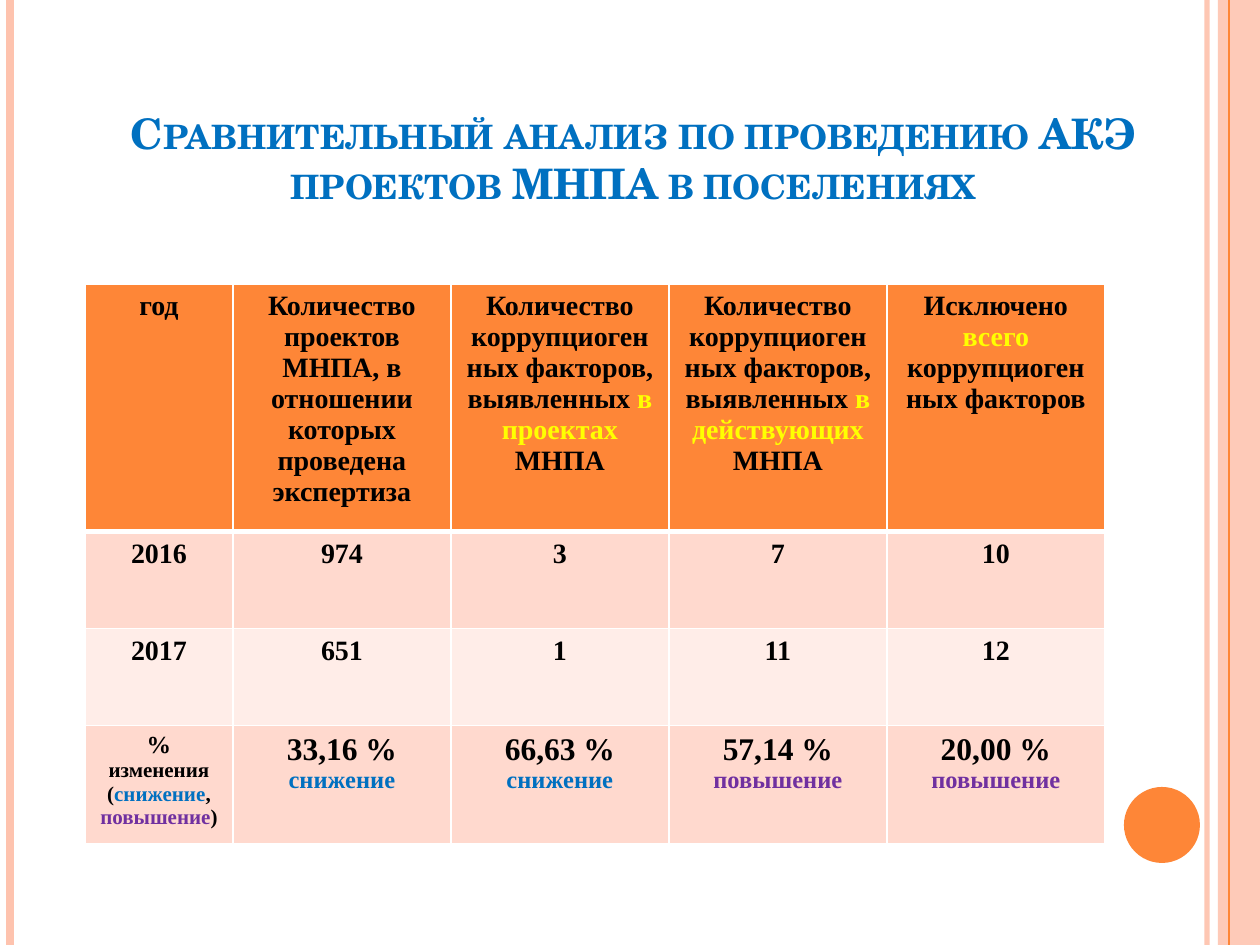
from lxml import etree
from pptx import Presentation, util as u
from pptx.dml.color import RGBColor
from pptx.enum import shapes, text
from pptx.oxml.ns import qn

ORANGE, PEACH, WHITE, BLACK = "FE8637", "FEC3AE", "FFFFFF", "000000"
YELLOW, BLUE, PURPLE = "FFFF00", "0070C0", "7030A0"
LIGHT, PALE = "FFD9CE", "FFEDE8"
WIDE, HIGH = 1260, 945


def px(n):
    return u.Inches(n / 126)


def rgb(code):
    return RGBColor.from_string(code)


def fade(fill, share):
    """Make a solid fill partly clear; share is the opacity in percent."""
    tint = fill.find(".//" + qn("a:srgbClr"))
    etree.SubElement(tint, qn("a:alpha")).set("val", str(share * 1000))


def stripe(slide, x, color, width, share=100):
    line = slide.shapes.add_connector(
        shapes.MSO_CONNECTOR.STRAIGHT, px(x), 0, px(x), px(HIGH))
    line.line.color.rgb = rgb(color)
    line.line.width = u.Pt(width)
    props = line._element.spPr
    if share < 100:
        fade(props.find(qn("a:ln")), share)
    etree.SubElement(props, qn("a:effectLst"))


def block(slide, kind, box, color, share=100):
    shape = slide.shapes.add_shape(kind, *map(px, box))
    shape.shadow.inherit = False
    shape.fill.solid()
    shape.fill.fore_color.rgb = rgb(color)
    shape.line.fill.background()
    if share < 100:
        fade(shape._element.spPr.find(qn("a:solidFill")), share)


def title(slide, words, box):
    frame = slide.shapes.add_textbox(*map(px, box)).text_frame
    frame.word_wrap = True
    frame.vertical_anchor = text.MSO_ANCHOR.BOTTOM
    para = frame.paragraphs[0]
    para.alignment = text.PP_ALIGN.CENTER
    run = para.add_run()
    run.text = words
    font = run.font
    font.name, font.size, font.bold = "TeX Gyre Schola", u.Pt(24), True
    font.color.rgb = rgb(BLUE)
    run._r.get_or_add_rPr().set("cap", "small")


def border(cell, widths):
    """Draw white cell borders; widths are left, right, top, bottom."""
    props = cell._tc.get_or_add_tcPr()
    for i, (side, width) in enumerate(zip("LRTB", widths)):
        edge = etree.Element(qn("a:ln" + side), w=str(u.Pt(width)))
        fill = etree.SubElement(edge, qn("a:solidFill"))
        etree.SubElement(fill, qn("a:srgbClr")).set("val", WHITE)
        props.insert(i, edge)


def write(cell, paras):
    """Each paragraph is a list of (words, size, color)."""
    frame = cell.text_frame
    for i, runs in enumerate(paras):
        para = frame.add_paragraph() if i else frame.paragraphs[0]
        para.alignment = text.PP_ALIGN.CENTER
        para.font.size = u.Pt(runs[0][1])
        for words, size, color in runs:
            run = para.add_run()
            run.text = words
            font = run.font
            font.name, font.size, font.bold = "Times New Roman", u.Pt(size), True
            font.color.rgb = rgb(color)


def head(start, mark="", end=""):
    parts = (start, BLACK), (mark, YELLOW), (end, BLACK)
    return [[(words, 16, color) for words, color in parts if words]]


def change(share, trend, color):
    return [[(share, 18, BLACK)], [(trend, 14, color)]]


def grid(slide, rows, left, top, cols, highs, fills):
    table = slide.shapes.add_table(
        len(rows), len(cols), px(left), px(top),
        px(sum(cols)), px(sum(highs))).table
    table.first_row = table.horz_banding = False
    for col, width in zip(table.columns, cols):
        col.width = px(width)
    for r, row in enumerate(rows):
        table.rows[r].height = px(highs[r])
        for c, paras in enumerate(row):
            cell = table.cell(r, c)
            cell.fill.solid()
            cell.fill.fore_color.rgb = rgb(fills[r])
            border(cell, (1, 1, 3 if r == 1 else 1, 3 if r == 0 else 1))
            write(cell, paras)


def main():
    deck = Presentation()
    deck.slide_width, deck.slide_height = px(WIDE), px(HIGH)
    slide = deck.slides.add_slide(deck.slide_layouts[6])

    # Side stripes and disc
    stripe(slide, 1207, PEACH, 3, 93)
    stripe(slide, 10, PEACH, 4.5)
    stripe(slide, 1229, ORANGE, 1.5)
    block(slide, shapes.MSO_SHAPE.RECTANGLE, (1218, 0, 42, HIGH), PEACH, 87)
    stripe(slide, 1229, ORANGE, 0.75)
    block(slide, shapes.MSO_SHAPE.OVAL, (1124, 787, 76, 76), ORANGE)

    title(slide, "Сравнительный анализ по проведению АКЭ проектов МНПА в поселениях",
          (84, 45, 1099, 169))

    # Yearly figures and their change
    found = "Количество коррупциогенных факторов, выявленных "
    down, up = ("снижение", BLUE), ("повышение", PURPLE)
    rows = [
        [head("год"),
         head("Количество проектов МНПА, в отношении которых проведена экспертиза"),
         head(found, "в проектах", " МНПА"),
         head(found, "в действующих ", "МНПА"),
         head("Исключено ", "всего ", "коррупциогенных факторов")],
        [head(n) for n in ("2016", "974", "3", "7", "10")],
        [head(n) for n in ("2017", "651", "1", "11", "12")],
        [[[("% ", 14, BLACK), ("изменения", 12, BLACK)],
          [("(", 12, BLACK), ("снижение", 12, BLUE), (", ", 12, BLACK),
           ("повышение", 12, PURPLE), (")", 12, BLACK)]],
         change("33,16 %", *down), change("66,63 %", *down),
         change("57,14 %", *up), change("20,00 %", *up)],
    ]
    grid(slide, rows, 85, 284, [148] + [218] * 4, [232] + [97] * 3,
         [ORANGE, LIGHT, PALE, LIGHT])

    deck.save("out.pptx")


if __name__ == "__main__":
    main()
